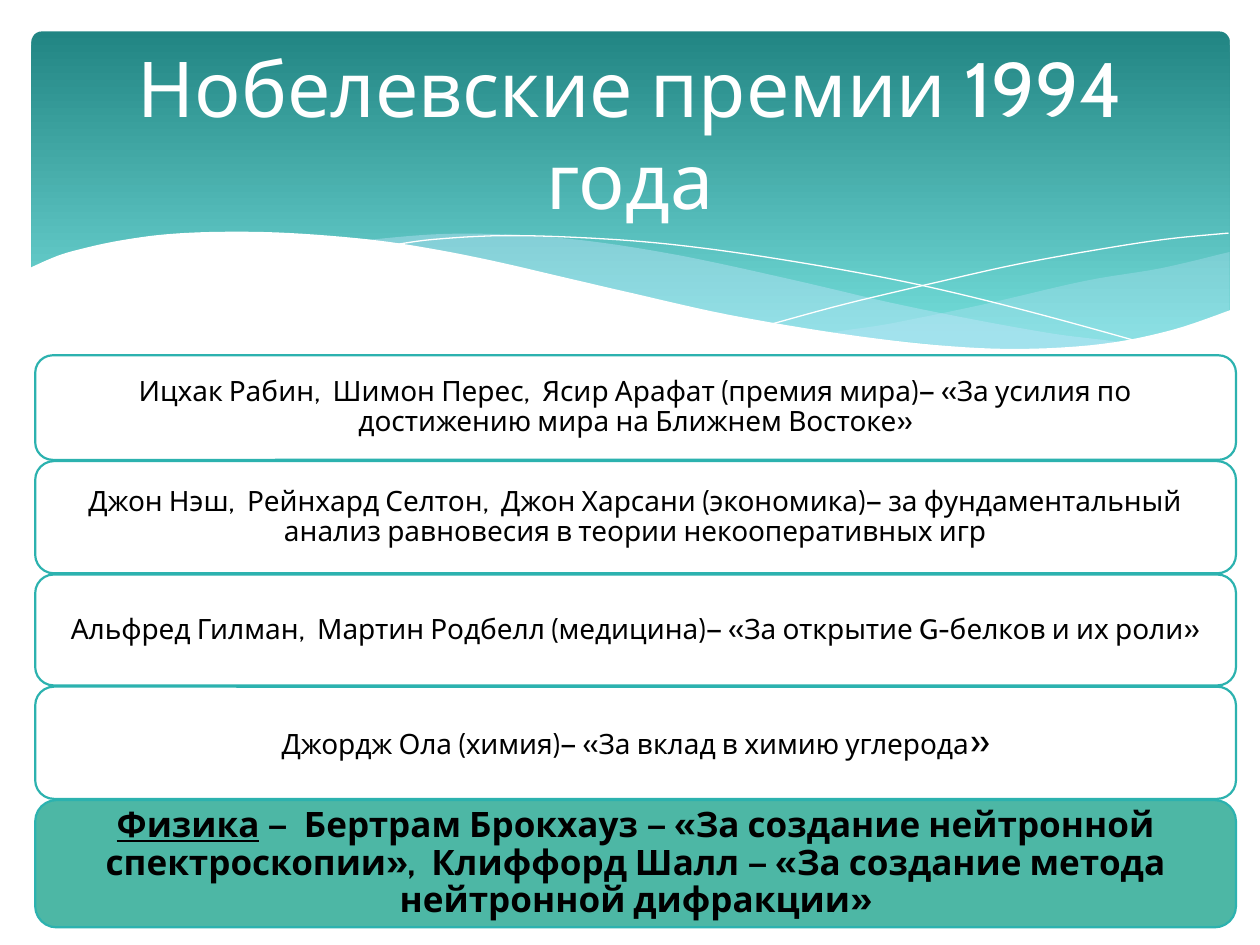
from lxml import etree
from pptx import Presentation
from pptx.dml.color import RGBColor
from pptx.enum.shapes import MSO_SHAPE
from pptx.enum.text import MSO_ANCHOR, PP_ALIGN
from pptx.oxml.ns import qn
from pptx.util import Pt

PX = 9144
ROUND = MSO_SHAPE.ROUNDED_RECTANGLE
MIDDLE = MSO_ANCHOR.MIDDLE
CENTER = PP_ALIGN.CENTER
FONT = "Cabin"
WHITE = RGBColor(0xFF, 0xFF, 0xFF)
BLACK = RGBColor(0x00, 0x00, 0x00)
DEEP = RGBColor(0x21, 0x85, 0x83)
AQUA = RGBColor(0x74, 0xDD, 0xDA)
PALE = RGBColor(0xC6, 0xE7, 0xFC)
EDGE = RGBColor(0x2C, 0xB2, 0xAF)
GREEN = RGBColor(0x4D, 0xB7, 0xA5)

RIGHT = [(951, 175), (896, 188), (836, 198), (754, 217), (681, 232), (636, 240),
         (694, 246), (756, 252), (819, 252), (872, 245), (917, 234), (951, 222)]
MAIN = [(261, 166), (319, 161), (374, 161), (440, 166), (516, 178), (604, 197),
        (681, 215), (750, 229), (812, 240), (868, 248), (813, 253), (748, 252),
        (670, 245), (576, 230), (505, 215), (424, 197), (358, 182), (298, 171),
        (261, 166)]
FALL = [(284, 170), (319, 165), (376, 162), (444, 164), (508, 169), (583, 179),
        (670, 194), (735, 208), (806, 226), (882, 247)]
RISE = [(588, 232), (647, 216), (723, 198), (781, 185), (841, 174), (899, 165),
        (950, 160)]
SHORE = [(952, 221), (905, 237), (850, 248), (784, 252), (719, 249), (643, 240),
         (554, 225), (478, 208), (422, 195), (366, 182), (315, 172), (267, 165),
         (205, 160), (152, 159), (107, 161), (70, 166), (42, 172), (21, 178),
         (-2, 188)]

CARDS = [
    (83, 7, WHITE, [("Ицхак Рабин,  Шимон Перес,  Ясир Арафат (премия мира)— «За усилия по достижению мира на Ближнем Востоке»", 16, False, False)]),
    (89, 7, WHITE, [("Джон Нэш,  Рейнхард Селтон,  Джон Харсани (экономика)— за фундаментальный анализ равновесия в теории некооперативных игр", 16, False, False)]),
    (88, 7, WHITE, [("Альфред Гилман,  Мартин Родбелл (медицина)— «За открытие G-белков и их роли»", 16, False, False)]),
    (89, 7, WHITE, [("Джордж Ола (химия)— «За вклад в химию углерода", 16, False, False),
                    ("»", 20, False, False)]),
    (101, 8, GREEN, [("Физика", 20, True, True),
                     (" —  Бертрам Брокхауз — «За создание нейтронной спектроскопии»,  Клиффорд Шалл — «За создание метода нейтронной дифракции»", 20, True, False)]),
]


def curve(knots, steps=6):
    """Return points on a smooth curve through the knots."""
    ends = [knots[0], *knots, knots[-1]]
    points = [knots[0]]
    for a, b, c, d in zip(ends, ends[1:], ends[2:], ends[3:]):
        for step in range(1, steps + 1):
            t = step / steps
            points.append(tuple(
                (2 * q + (r - p) * t + (2 * p - 5 * q + 4 * r - s) * t ** 2
                 + (3 * q - p - 3 * r + s) * t ** 3) / 2
                for p, q, r, s in zip(a, b, c, d)))
    return points


def trace(slide, left, top, points, close):
    """Draw a freeform through points given relative to a corner."""
    spots = [((left + x) * PX, (top + y) * PX) for x, y in points]
    pen = slide.shapes.build_freeform(*spots[0])
    pen.add_line_segments(spots[1:], close=close)
    shape = pen.convert_to_shape()
    shape.shadow.inherit = False
    return shape


def wave(slide, left, top, points, color, alpha=100):
    """Draw a filled wave with the given opacity."""
    shape = trace(slide, left, top, points, True)
    shape.fill.solid()
    shape.fill.fore_color.rgb = color
    shape.line.fill.background()
    if alpha < 100:
        tint = shape.fill._xPr.find(".//" + qn("a:srgbClr"))
        etree.SubElement(tint, qn("a:alpha"), val=str(alpha * 1000))


def thread(slide, left, top, knots):
    """Draw a white hairline curve."""
    shape = trace(slide, left, top, curve(knots), False)
    shape.fill.background()
    shape.line.color.rgb = WHITE
    shape.line.width = 0


def banner(slide, left, top, width, height):
    """Draw the gradient banner with its waves."""
    panel = slide.shapes.add_shape(ROUND, left * PX, top * PX, width * PX, height * PX)
    panel.shadow.inherit = False
    panel.adjustments[0] = 0.03
    panel.line.fill.background()
    panel.fill.gradient()
    panel.fill.gradient_angle = 270
    for stop, color, place in zip(panel.fill.gradient_stops, (DEEP, AQUA), (0, 0.9)):
        stop.color.rgb = color
        stop.position = place
    wave(slide, left, top, curve(RIGHT), PALE, 29)
    wave(slide, left, top, curve(MAIN), PALE, 40)
    thread(slide, left, top, FALL)
    thread(slide, left, top, RISE)
    base = height + 34
    wave(slide, left, top, curve(SHORE) + [(-2, base), (width + 1, base)], WHITE)


def style(run, size, color, bold=False, under=False):
    """Set the font of a run."""
    font = run.font
    font.name = FONT
    font.size = Pt(size)
    font.color.rgb = color
    font.bold = bold
    font.underline = under


def card(slide, left, top, width, height, inset, color, parts):
    """Draw one prize card with its text."""
    shape = slide.shapes.add_shape(ROUND, left * PX, top * PX, width * PX, height * PX)
    shape.shadow.inherit = False
    shape.fill.solid()
    shape.fill.fore_color.rgb = color
    shape.line.color.rgb = EDGE
    shape.line.width = Pt(1.25)
    frame = shape.text_frame
    frame.word_wrap = True
    frame.vertical_anchor = MIDDLE
    frame.margin_left = frame.margin_right = inset * PX
    frame.margin_top = frame.margin_bottom = inset * PX
    para = frame.paragraphs[0]
    para.alignment = CENTER
    para.line_spacing = 0.9
    for text, size, bold, under in parts:
        run = para.add_run()
        run.text = text
        style(run, size, BLACK, bold, under)


def stack(slide, left, top, width, gap):
    """Stack the prize cards from top to bottom."""
    for height, inset, color, parts in CARDS:
        card(slide, left, top, width, height, inset, color, parts)
        top += height + gap


def title(slide, left, top, width, height):
    """Write the slide title."""
    box = slide.shapes.add_textbox(left * PX, top * PX, width * PX, height * PX)
    frame = box.text_frame
    frame.word_wrap = True
    frame.vertical_anchor = MIDDLE
    frame.text = "Нобелевские премии 1994 года"
    para = frame.paragraphs[0]
    para.alignment = CENTER
    style(para.runs[0], 44, WHITE)


def main():
    """Build and save the slide."""
    deck = Presentation()
    deck.slide_width = 1000 * PX
    deck.slide_height = 750 * PX
    slide = deck.slides.add_slide(deck.slide_layouts[6])
    banner(slide, 25, 25, 951, 270)
    stack(slide, 28, 282, 953, 1)
    title(slide, 50, 37, 900, 137)
    deck.save("out.pptx")


if __name__ == "__main__":
    main()
